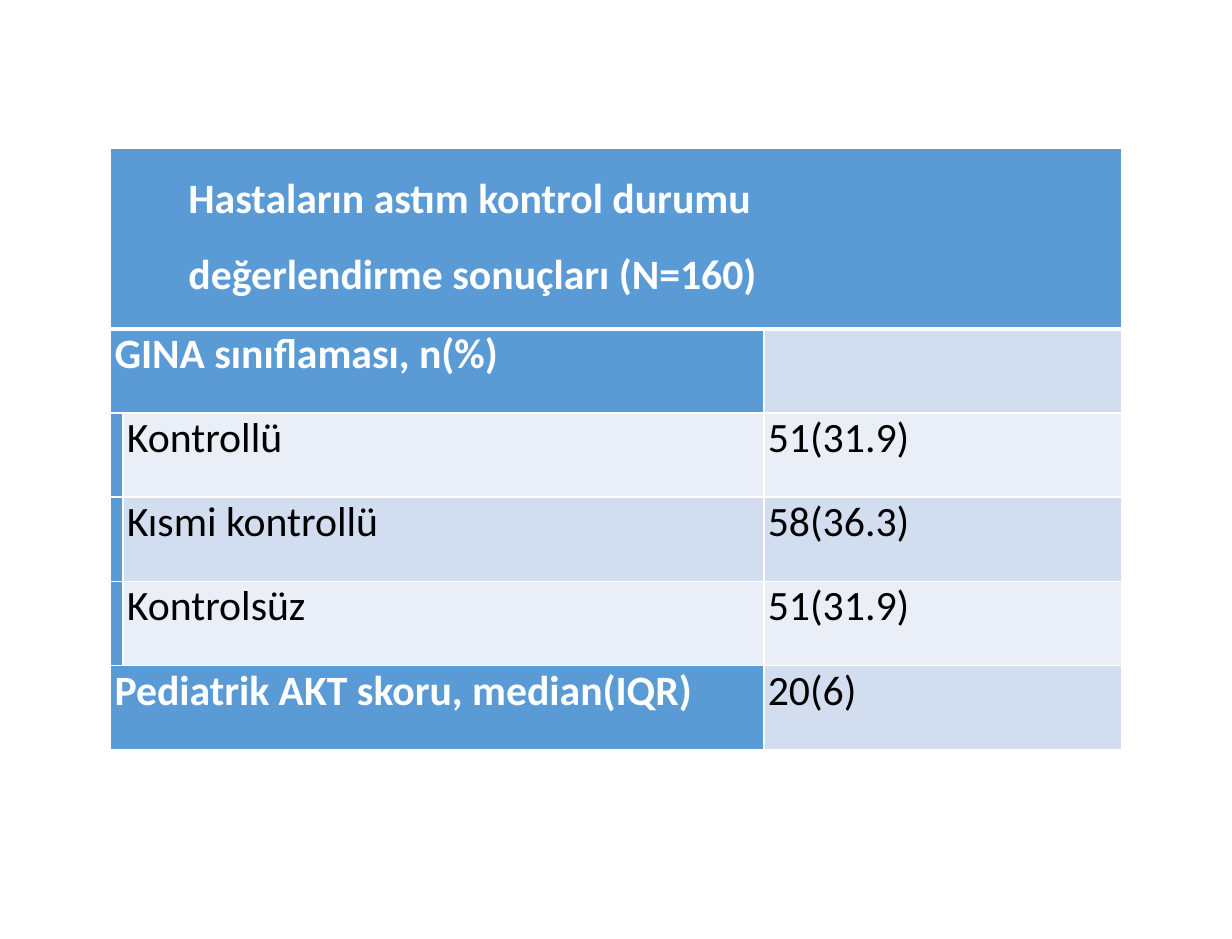
import pptx
import pptx.util
import pptx.dml.color
import pptx.enum.text
import pptx.oxml

Pt = pptx.util.Pt
RGB = pptx.dml.color.RGBColor
NS = "http://schemas.openxmlformats.org/drawingml/2006/main"
HUES = {"white": "FFFFFF", "black": "000000", "head": "5B9BD5",
        "dark": "D2DEEF", "light": "EAEFF7"}


def write(frame, text, font="Calibri", size=24, hue="black", bold=False,
          align=None, space=None, left=0):
    for num, line in enumerate(text.split("\n")):
        para = frame.add_paragraph() if num else frame.paragraphs[0]
        para.alignment = align
        para.line_spacing = space
        if left:
            props = para._p.get_or_add_pPr()
            props.set("marL", str(Pt(left)))
            props.set("indent", "0")
        run = para.add_run()
        run.text = line
        run.font.name = font
        run.font.size = Pt(size)
        run.font.bold = bold
        run.font.color.rgb = RGB.from_string(HUES[hue])


class Deck:
    def __init__(self, width, height):
        self.file = pptx.Presentation()
        self.file.slide_width = Pt(width)
        self.file.slide_height = Pt(height)
        self.slide = self.file.slides.add_slide(self.file.slide_layouts[6])
        self.inset = 2.16

    def table(self, left, top, widths, heights):
        shape = self.slide.shapes.add_table(
            len(heights), len(widths), Pt(left), Pt(top),
            Pt(sum(widths)), Pt(sum(heights)))
        grid = shape.table
        grid.horz_banding = False
        for col, width in zip(grid.columns, widths):
            col.width = Pt(width)
        for row, height in zip(grid.rows, heights):
            row.height = Pt(height)
        return grid

    def cell(self, cell, fill, text="", base=1, **style):
        cell.fill.solid()
        cell.fill.fore_color.rgb = RGB.from_string(HUES[fill])
        cell.margin_left = cell.margin_right = Pt(self.inset)
        cell.margin_top = cell.margin_bottom = 0
        self.edges(cell, base)
        if text:
            write(cell.text_frame, text, **style)

    def edges(self, cell, base):
        props = cell._tc.get_or_add_tcPr()
        for num, side in enumerate("LRTB"):
            width = Pt(base if side == "B" else 1)
            props.insert(num, pptx.oxml.parse_xml(
                f'<a:ln{side} xmlns:a="{NS}" w="{width}"><a:solidFill>'
                f'<a:srgbClr val="{HUES["white"]}"/>'
                f'</a:solidFill></a:ln{side}>'))


def main():
    deck = Deck(708.48, 540)
    grid = deck.table(63.7, 85.4, [6.5, 368.6, 205.9], [103.7] + [48.4] * 5)
    title = "Hastaların astım kontrol durumu \ndeğerlendirme sonuçları (N=160)"
    rows = [
        ("GINA sınıflaması, n(%)", "", True),
        ("Kontrollü", "51(31.9)", False),
        ("Kısmi kontrollü", "58(36.3)", False),
        ("Kontrolsüz", "51(31.9)", False),
        ("Pediatrik AKT skoru, median(IQR)", "20(6)", True),
    ]
    grid.cell(0, 0).merge(grid.cell(0, 2))
    deck.cell(grid.cell(0, 0), "head", title, base=3, hue="white", bold=True,
              align=pptx.enum.text.PP_ALIGN.JUSTIFY, space=1.5, left=42.5)
    for col in (1, 2):
        deck.cell(grid.cell(0, col), "head", base=3)
    for num, (label, value, group) in enumerate(rows, 1):
        band = "dark" if num % 2 else "light"
        first, second, third = [grid.cell(num, col) for col in range(3)]
        if group:
            first.merge(second)
            deck.cell(first, "head", label, hue="white", bold=True)
            deck.cell(second, "head")
        else:
            deck.cell(first, "head")
            deck.cell(second, band, label)
        deck.cell(third, band, value)
    deck.file.save("out.pptx")


if __name__ == "__main__":
    main()
